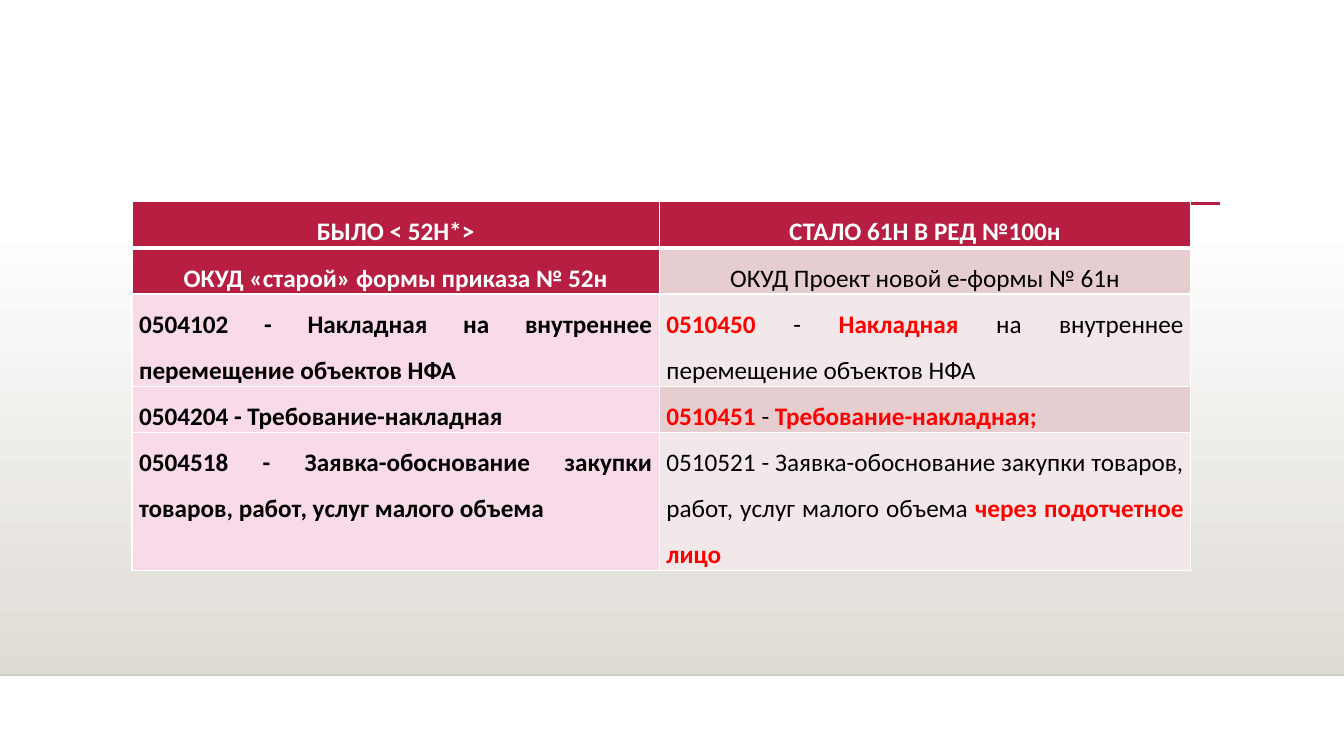
from dataclasses import dataclass

import lxml.etree
import pptx
import pptx.dml.color
import pptx.enum.shapes
import pptx.enum.text
import pptx.oxml
import pptx.oxml.ns
import pptx.util

Inches = pptx.util.Inches
qn = pptx.oxml.ns.qn
ALIGN = pptx.enum.text.PP_ALIGN

COLORS = {
    "white": "FFFFFF",
    "black": "000000",
    "floor": "DFDBD5",
    "edge": "000001",
    "crimson": "B71E42",
    "red": "FF0000",
    "pink": "F8DAE8",
    "rose": "E6CDCF",
    "pale": "F3E8E9",
}
LINE_HEIGHT = 0.45


@dataclass
class Span:
    text: str
    color: str = "black"
    bold: bool = False


@dataclass
class Entry:
    fill: str
    spans: list[Span]
    align: int = ALIGN.JUSTIFY


@dataclass
class Row:
    lines: int
    old: Entry
    new: Entry


def red(text: str) -> Span:
    return Span(text, "red", True)


def heading(text: str) -> Entry:
    return Entry("crimson", [Span(text, "white", True)], ALIGN.CENTER)


def old_form(text: str) -> Entry:
    return Entry("pink", [Span(text, bold=True)])


ROWS = [
    Row(1, heading("БЫЛО < 52Н*>"), heading("СТАЛО 61Н В РЕД №100н")),
    Row(1, heading("ОКУД «старой» формы приказа № 52н"),
        Entry("rose", [Span("ОКУД Проект новой е-формы № 61н")], ALIGN.CENTER)),
    Row(2, old_form("0504102 - Накладная на внутреннее перемещение объектов НФА"),
        Entry("pale", [red("0510450"), Span(" - "), red("Накладная"),
                       Span(" на внутреннее перемещение объектов НФА")])),
    Row(1, old_form("0504204 - Требование-накладная"),
        Entry("rose", [red("0510451"), Span(" - "), red("Требование-накладная;")])),
    Row(3, old_form("0504518 - Заявка-обоснование закупки товаров, работ, услуг малого объема"),
        Entry("pale", [Span("0510521 - Заявка-обоснование закупки товаров, работ, "
                            "услуг малого объема "),
                       red("через подотчетное лицо")])),
]


def rgb(name: str) -> pptx.dml.color.RGBColor:
    return pptx.dml.color.RGBColor.from_string(COLORS[name])


def add_text(para, text: str, *, color: str, bold: bool, size: float = 18) -> None:
    run = para.add_run()
    run.text = text
    run.font.name = "Calibri"
    run.font.size = pptx.util.Pt(size)
    run.font.bold = bold
    run.font.color.rgb = rgb(color)


def add_rule(slide, left: float, right: float, top: float, color: str, width: float):
    rule = slide.shapes.add_connector(
        pptx.enum.shapes.MSO_CONNECTOR.STRAIGHT,
        Inches(left), Inches(top), Inches(right), Inches(top))
    rule.line.color.rgb = rgb(color)
    rule.line.width = pptx.util.Pt(width)
    lxml.etree.SubElement(rule._element.spPr, qn("a:effectLst"))
    return rule


def set_borders(cell, top: float, bottom: float) -> None:
    """Draw white cell borders; widths are in points. Call before filling the cell."""
    properties = cell._tc.get_or_add_tcPr()
    for tag, width in (("lnL", 1), ("lnR", 1), ("lnT", top), ("lnB", bottom)):
        border = lxml.etree.SubElement(properties, qn(f"a:{tag}"), w=str(pptx.util.Pt(width)))
        fill = lxml.etree.SubElement(border, qn("a:solidFill"))
        lxml.etree.SubElement(fill, qn("a:srgbClr"), val=COLORS["white"])


def fill_cell(cell, entry: Entry, row_index: int) -> None:
    set_borders(cell, 3 if row_index == 1 else 1, 3 if row_index == 0 else 1)
    cell.fill.solid()
    cell.fill.fore_color.rgb = rgb(entry.fill)
    cell.margin_left = cell.margin_right = Inches(0.07)
    cell.margin_top = cell.margin_bottom = 0
    para = cell.text_frame.paragraphs[0]
    para.alignment = entry.align
    para.line_spacing = 1.5
    para.space_after = pptx.util.Pt(8)
    for span in entry.spans:
        add_text(para, span.text, color=span.color, bold=span.bold)


def add_background(slide) -> None:
    floor = slide.shapes.add_shape(
        pptx.enum.shapes.MSO_SHAPE.RECTANGLE,
        0, Inches(2.21), Inches(13.33), Inches(4.49))
    floor.shadow.inherit = False
    floor.line.fill.background()
    floor.fill.gradient()
    floor.fill.gradient_angle = 270
    for stop, color in zip(floor.fill.gradient_stops, ("white", "floor")):
        stop.color.rgb = rgb(color)
    edge = add_rule(slide, 0, 13.33, 6.7, "edge", 1)
    edge_color = edge.line._ln.find(".//" + qn("a:srgbClr"))
    lxml.etree.SubElement(edge_color, qn("a:alpha"), val="20000")
    add_rule(slide, 1.59, 12.1, 2.02, "crimson", 2.5)


def add_forms_table(slide) -> None:
    height = LINE_HEIGHT * sum(row.lines for row in ROWS)
    table = slide.shapes.add_table(
        len(ROWS), 2, Inches(1.31), Inches(2), Inches(10.5), Inches(height)).table
    for column, width in zip(table.columns, (5.23, 5.27)):
        column.width = Inches(width)
    for index, row in enumerate(ROWS):
        table.rows[index].height = Inches(LINE_HEIGHT * row.lines)
        for column_index, entry in enumerate((row.old, row.new)):
            fill_cell(table.cell(index, column_index), entry, index)


def main() -> None:
    deck = pptx.Presentation()
    deck.slide_width, deck.slide_height = Inches(13.33), Inches(7.5)
    slide = deck.slides.add_slide(deck.slide_layouts[6])
    add_background(slide)
    add_forms_table(slide)
    deck.save("out.pptx")


if __name__ == "__main__":
    main()
